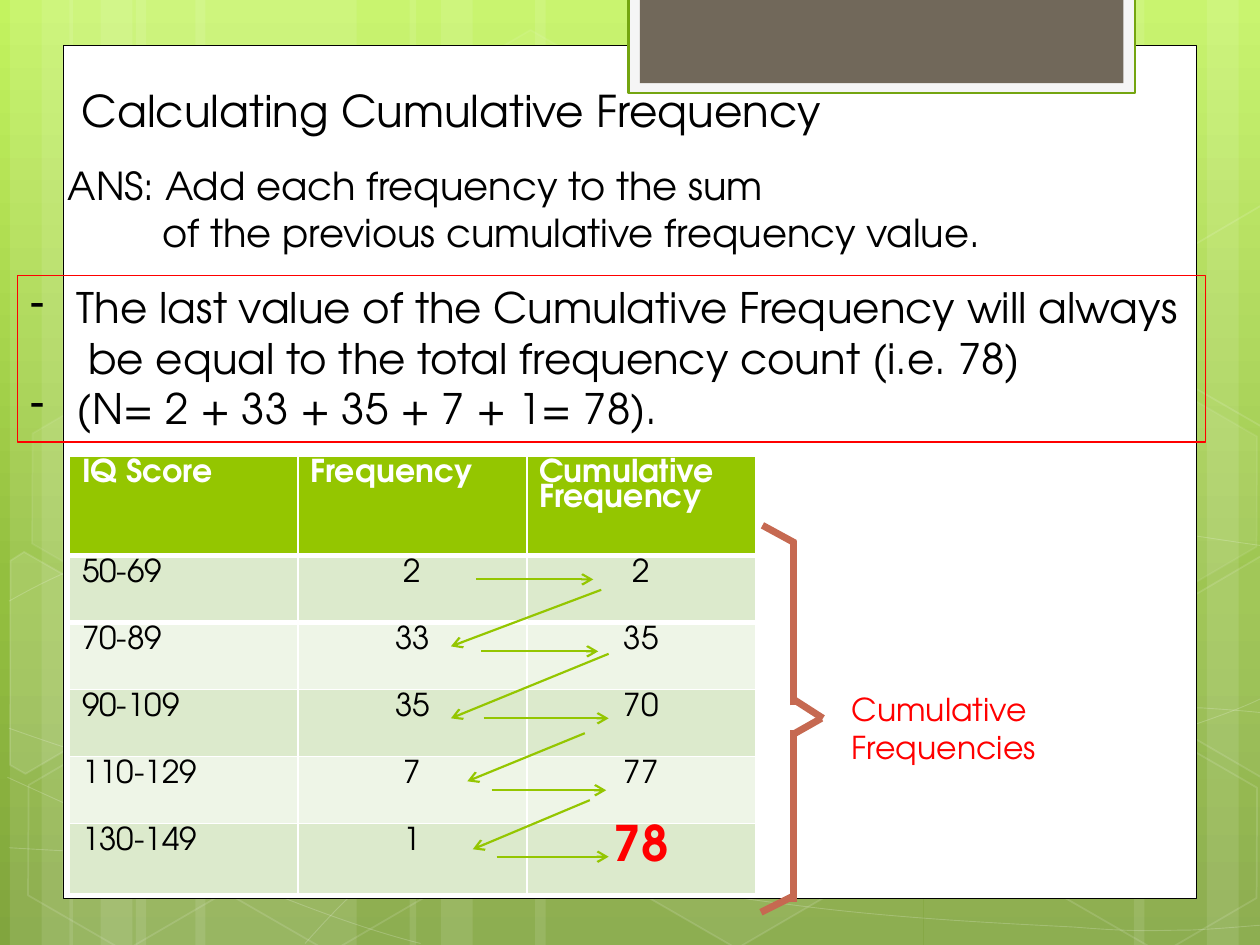
from copy import deepcopy
from math import cos, radians, sin
from typing import NamedTuple, Optional

from lxml import etree
from pptx import Presentation
from pptx.dml.color import RGBColor
from pptx.enum.shapes import MSO_CONNECTOR, MSO_SHAPE
from pptx.enum.text import PP_ALIGN
from pptx.oxml.ns import qn
from pptx.util import Cm, Pt

FONT = "TeX Gyre Adventor"
TILT = 30  # degrees, for all hexagons
COLOURS = {
    "sky": "C3F35F", "leaf": "93BF3F", "moss": "81A53E", "white": "FFFFFF",
    "black": "000000", "red": "FF0000", "green": "94C600", "edge": "74A510",
    "tab": "F5F5F5", "stone": "71685A", "brick": "C66951",
    "band": "DCEACC", "pale": "EEF5E7",
}


class Hexagon(NamedTuple):
    left: float
    top: float
    fill_alpha: int  # per cent, 0 for no fill
    line_alpha: int


class Line(NamedTuple):
    x1: float
    y1: float
    x2: float
    y2: float


class Entry(NamedTuple):
    text: str
    margin: float = 0
    bullet: Optional[str] = None


def inch(value: float) -> int:
    return Cm(round(value * 2.54, 2))


def rgb(name: str) -> RGBColor:
    return RGBColor.from_string(COLOURS[name])


def set_alpha(parent, percent: int) -> None:
    for colour in parent.iter(qn("a:srgbClr")):
        etree.SubElement(colour, qn("a:alpha"), val=str(percent * 1000))


def paint(shape, fill: Optional[str], line: Optional[str] = None, width: float = 1,
          fill_alpha: int = 100, line_alpha: int = 100) -> None:
    shape.shadow.inherit = False
    if fill:
        shape.fill.solid()
        shape.fill.fore_color.rgb = rgb(fill)
        if fill_alpha < 100:
            set_alpha(shape.element.spPr.find(qn("a:solidFill")), fill_alpha)
    else:
        shape.fill.background()
    if line:
        shape.line.color.rgb = rgb(line)
        shape.line.width = Pt(width)
        if line_alpha < 100:
            set_alpha(shape.element.spPr.find(qn("a:ln")), line_alpha)
    else:
        shape.line.fill.background()


def add_preset(kind, left: float, top: float, width: float, height: float):
    return slide.shapes.add_shape(kind, inch(left), inch(top), inch(width), inch(height))


def add_outline(points: list, closed: bool):
    start, *rest = [(inch(x), inch(y)) for x, y in points]
    builder = slide.shapes.build_freeform(*start)
    builder.add_line_segments(rest, close=closed)
    return builder.convert_to_shape()


def add_curve(knots: list):
    """Joined cubic curves; knots are start, then control, control, end."""
    curve = add_outline(knots, False)
    segments = list(curve.element.iter(qn("a:lnTo")))
    for i in range(0, len(segments), 3):
        cubic = etree.Element(qn("a:cubicBezTo"))
        segments[i].addprevious(cubic)
        for segment in segments[i:i + 3]:
            cubic.append(segment[0])
            segment.getparent().remove(segment)
    return curve


def add_cut_hexagon(points: list, centre: tuple):
    """Turn the points back about the centre, then tilt the finished shape."""
    c, s = cos(radians(TILT)), sin(radians(TILT))
    offsets = [(x - centre[0], y - centre[1]) for x, y in points]
    shape = add_outline([(centre[0] + c * dx + s * dy, centre[1] - s * dx + c * dy)
                         for dx, dy in offsets], True)
    shape.rotation = TILT
    return shape


def add_line(line: Line, colour: str, width: float, arrow: bool = False) -> None:
    connector = slide.shapes.add_connector(MSO_CONNECTOR.STRAIGHT, *map(inch, line))
    connector.line.color.rgb = rgb(colour)
    connector.line.width = Pt(width)
    properties = connector.element.spPr
    if arrow:
        etree.SubElement(properties.find(qn("a:ln")), qn("a:tailEnd"), type="arrow")
    etree.SubElement(properties, qn("a:effectLst"))


def add_border(cell, side: str, width: float) -> None:
    border = etree.Element(qn("a:" + side), w=str(Pt(width)))
    fill = etree.SubElement(border, qn("a:solidFill"))
    etree.SubElement(fill, qn("a:srgbClr"), val=COLOURS["white"])
    cell._tc.get_or_add_tcPr().insert(0, border)


def style(paragraph, size: float, colour: str, bold: bool = False) -> None:
    paragraph.font.name = FONT
    paragraph.font.size = Pt(size)
    paragraph.font.bold = bold
    paragraph.font.color.rgb = rgb(colour)


def add_text(box: tuple, entries: list, size: float, colour: str = "black"):
    textbox = slide.shapes.add_textbox(*map(inch, box))
    frame = textbox.text_frame
    frame.word_wrap = True
    for i, entry in enumerate(entries):
        paragraph = frame.add_paragraph() if i else frame.paragraphs[0]
        paragraph.text = entry.text
        properties = paragraph._p.get_or_add_pPr()
        if entry.margin:
            properties.set("marL", str(inch(entry.margin)))
        if entry.bullet:
            properties.set("indent", str(-inch(entry.margin)))
            etree.SubElement(properties, qn("a:buFontTx"))
            etree.SubElement(properties, qn("a:buChar"), char=entry.bullet)
        style(paragraph, size, colour)
    return textbox


presentation = Presentation()
presentation.slide_width, presentation.slide_height = inch(10), inch(7.5)
slide = presentation.slides.add_slide(presentation.slide_layouts[6])

# Background gradient
backdrop = slide.background.fill
backdrop.gradient()
backdrop.gradient_angle = 270
stop_list = backdrop.gradient_stops[0]._gs.getparent()
stop_list.append(deepcopy(stop_list[-1]))
for stop, (position, name) in zip(backdrop.gradient_stops,
                                  [(0, "sky"), (0.62, "leaf"), (1, "moss")]):
    stop.position = position
    stop.color.rgb = rgb(name)

# Vertical streaks: left, width
for left, width in [(1.08, 1.75), (0.08, 0.5), (0.33, 0.83), (1.55, 1.75), (0.55, 0.5),
                    (0.8, 0.83), (7.33, 1.75), (9.58, 0.5), (9, 0.83), (4.25, 3.08),
                    (3.25, 0.5), (3.5, 0.83)]:
    paint(add_preset(MSO_SHAPE.RECTANGLE, left, 0, width, 7.5), "white", fill_alpha=10)

# Sweeping curves
for knots in [
    [(0.07, 6.73), (0.61, 6.76), (1.15, 6.79), (1.9, 6.78), (2.65, 6.77), (3.58, 6.75), (4.58, 6.65),
     (5.58, 6.55), (7, 6.36), (7.92, 6.17), (8.83, 5.98), (9.77, 5.68), (10.07, 5.51)],
    [(0.07, 4.77), (0.36, 4.61), (0.65, 4.46), (1.21, 4.31), (1.78, 4.16), (2.59, 3.94), (3.47, 3.87),
     (4.36, 3.8), (5.44, 3.79), (6.54, 3.87), (7.64, 3.95), (9.47, 4.26), (10.07, 4.34)],
    [(0.06, 6.17), (1.27, 6.72), (2.47, 7.27), (3.34, 7.49)],
    [(0.07, 5.78), (0.38, 5.89), (0.7, 6), (1.28, 6.16), (1.86, 6.31), (2.73, 6.56), (3.57, 6.73),
     (4.4, 6.9), (5.45, 7.08), (6.28, 7.18), (7.11, 7.29), (8, 7.33), (8.53, 7.36),
     (9.05, 7.4), (9.19, 7.38), (9.45, 7.38), (9.71, 7.37), (9.89, 7.35), (10.07, 7.34)],
    [(2.42, 7.49), (2.6, 7.29), (2.78, 7.09), (3.02, 6.91), (3.26, 6.73), (3.6, 6.53), (3.88, 6.39),
     (4.16, 6.25), (4.33, 6.19), (4.7, 6.09), (5.06, 5.99), (5.73, 5.85), (6.08, 5.78),
     (6.44, 5.71), (6.49, 5.71), (6.8, 5.69), (7.11, 5.66), (7.6, 5.63), (7.94, 5.62),
     (8.29, 5.61), (8.86, 5.62), (9.53, 5.62), (9.71, 5.63), (9.88, 5.64), (10.06, 5.66)],
]:
    paint(add_curve(knots), None, "white", 0.5, line_alpha=20)

# Hexagons, whole and cut by the slide edge
for cell in [Hexagon(3.34, 0.36, 4, 8), Hexagon(4.97, 5.89, 6, 12), Hexagon(0.11, 5.91, 0, 12),
             Hexagon(0.14, 3.12, 7, 8), Hexagon(1.74, 5.92, 0, 12), Hexagon(7.53, 4.53, 10, 12),
             Hexagon(8.34, 5.93, 0, 12), Hexagon(8.34, 3.14, 7, 8)]:
    hexagon = add_preset(MSO_SHAPE.HEXAGON, cell.left, cell.top, 1.75, 1.52)
    hexagon.adjustments[0], hexagon.adjustments[1] = 0.285, 1.155
    hexagon.rotation = TILT
    paint(hexagon, "white" if cell.fill_alpha else None, "white", 1,
          cell.fill_alpha, cell.line_alpha)
left_cut = [(0.08, 4.45), (0.19, 4.38), (0.96, 4.82), (0.95, 5.7), (0.2, 6.14), (0.08, 6.07)]
right_cut = [(9.26, 4.85), (10.01, 4.41), (10.09, 4.46), (10.09, 6.13), (10.02, 6.17), (9.26, 5.73)]
upper_cut = [(x, y - 2.78) for x, y in right_cut]
for points, centre, alpha in [(left_cut, (0.36, 5.35), 10), (right_cut, (9.85, 5.2), 4),
                              (upper_cut, (9.85, 2.41), 0)]:
    paint(add_cut_hexagon(points, centre), "white" if alpha else None, "white", 1, alpha, 12)

# White page and top tab
paint(add_preset(MSO_SHAPE.RECTANGLE, 0.5, 0.36, 9, 6.77), "white", "black", 0.5)
paint(add_preset(MSO_SHAPE.RECTANGLE, 4.99, -0.02, 4.02, 0.76), "tab", "edge", 1.25)
paint(add_preset(MSO_SHAPE.RECTANGLE, 5.08, -0.02, 3.84, 0.68), "stone")

# Title and bracket label
add_text((0.55, 0.62, 9.44, 0.52), [Entry("Calculating Cumulative Frequency")], 25)
add_text((6.66, 5.43, 2.88, 0.58), [Entry("Cumulative Frequencies")], 18, "red")

# Bracket
for stroke in [Line(6.31, 5.56, 6.53, 5.7), Line(6.31, 5.82, 6.52, 5.7), Line(6.3, 5.6, 6.3, 4.29),
               Line(6.3, 7.16, 6.3, 5.79), Line(6.31, 4.31, 6.05, 4.17), Line(6.3, 7.11, 6.04, 7.24)]:
    add_line(stroke, "brick", 4)

# Frequency table
scores = [("IQ Score", "Frequency", "Cumulative Frequency"), ("50-69", "2", "2"),
          ("70-89", "33", "35"), ("90-109", "35", "70"), ("110-129", "7", "77"), ("130-149", "1", "78")]
table = slide.shapes.add_table(len(scores), 3, inch(0.55), inch(3.62), inch(5.45), inch(3.48)).table
for column in table.columns:
    column.width = inch(5.45 / 3)
for r, (row, height) in enumerate(zip(scores, [0.79] + [0.53] * 4 + [0.56])):
    table.rows[r].height = inch(height)
    for c, value in enumerate(row):
        cell = table.cell(r, c)
        cell.text = value
        cell.fill.solid()
        cell.fill.fore_color.rgb = rgb("green" if r == 0 else "band" if r % 2 else "pale")
        if r < 2:
            add_border(cell, "lnT" if r else "lnB", 3)
        paragraph = cell.text_frame.paragraphs[0]
        paragraph.line_spacing = 0.87
        if r and c:
            paragraph.alignment = PP_ALIGN.CENTER
        if value == "78":
            style(paragraph, 28, "red", True)
        else:
            style(paragraph, 18, "black" if r else "white", r == 0)

# Arrows showing the order of addition
for arrow in [Line(3.78, 4.6, 4.71, 4.6), Line(4.77, 4.68, 3.58, 5.13), Line(3.82, 5.17, 4.75, 5.17),
              Line(4.83, 5.19, 3.58, 5.7), Line(3.84, 5.7, 4.83, 5.7), Line(4.64, 5.82, 3.71, 6.2),
              Line(3.9, 6.27, 4.81, 6.27), Line(4.68, 6.35, 3.75, 6.74), Line(3.94, 6.8, 4.83, 6.8)]:
    add_line(arrow, "green", 1.25, arrow=True)

# Answer and framed remark
add_text((0.44, 1.24, 7.57, 0.84),
         [Entry("ANS: Add each frequency to the sum"),
          Entry("of the previous cumulative frequency value.", 0.75)], 22)
remark = add_text((0.14, 2.19, 9.43, 1.32),
                  [Entry("The last value of the Cumulative Frequency will always", 0.37, "-"),
                   Entry("be equal to the total frequency count (i.e. 78)", 0.46),
                   Entry("(N= 2 + 33 + 35 + 7 + 1= 78).", 0.37, "-")], 24)
paint(remark, None, "red", 0.75)

presentation.save("out.pptx")
